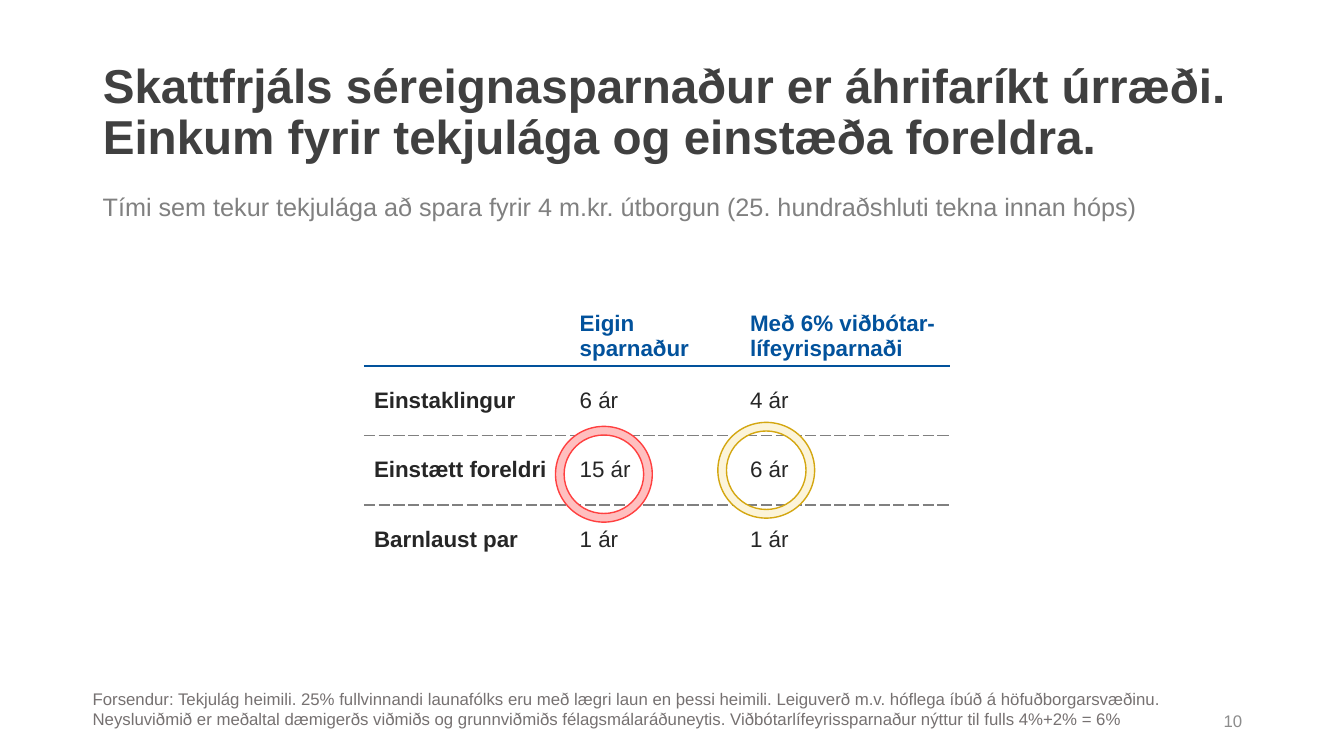
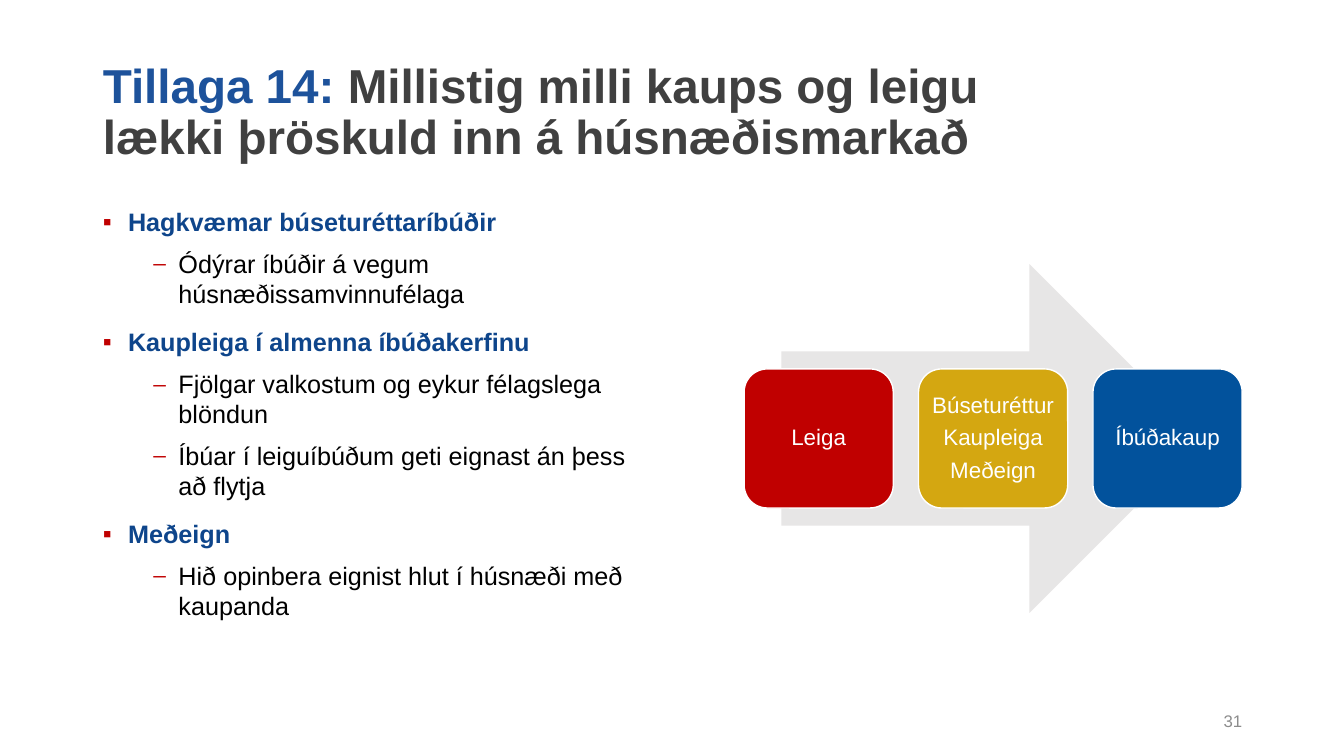
from lxml import etree
from pptx import Presentation
from pptx import util as u
from pptx.dml.color import RGBColor
from pptx.enum import shapes, text
from pptx.oxml import ns

COLORS = {
    "title": "404040", "navy": "02529C", "accent": "1D529B", "heading": "0E458B",
    "black": "000000", "ink": "262626", "gray": "808080", "note": "767171",
    "number": "8C8C8C", "red": "C00000", "gold": "D4A711", "white": "FFFFFF",
    "arrow": "E7E6E6", "ring_red": "FF4040", "pale_red": "FFBFBF", "pale_gold": "FCF4D9",
}
LEFT, MIDDLE = text.PP_ALIGN.LEFT, text.MSO_ANCHOR.MIDDLE
TITLE_PARA = {"alignment": LEFT, "line_spacing": 0.9, "space_before": u.Pt(0)}
BULLETS = [
    {"char": "▪", "indent": 0.25, "before": 10, "color": "heading", "bold": True},
    {"char": "⎯", "indent": 0.75, "before": 5, "color": "black", "bold": False},
]


def write(para, spans, size, bold=False, **para_format):
    for name, value in para_format.items():
        setattr(para, name, value)
    for words, color in spans:
        for i, line in enumerate(words.split("\n")):
            if i:
                para.add_line_break()
            span = para.add_run()
            span.text = line
            for name, value in {"name": "Arial", "size": u.Pt(size), "bold": bold}.items():
                setattr(span.font, name, value)
            span.font.color.rgb = RGBColor.from_string(COLORS[color])


def place(page, kind, left, top, width, height, fill=None, line=None):
    area = [u.Inches(n) for n in (left, top, width, height)]
    if kind is None:
        box = page.shapes.add_textbox(*area)
        box.text_frame.word_wrap = True
        return box
    box = page.shapes.add_shape(kind, *area)
    box.shadow.inherit = False
    box.fill.solid()
    box.fill.fore_color.rgb = RGBColor.from_string(COLORS[fill])
    if line:
        box.line.color.rgb = RGBColor.from_string(COLORS[line])
        box.line.width = u.Pt(1)
    else:
        box.line.fill.background()
    return box


deck = Presentation()
deck.slide_width, deck.slide_height = u.Inches(13.33), u.Inches(7.5)

pages = []
for layout, number, title_spans in (
    (5, "10", [("Skattfrjáls séreignasparnaður er áhrifaríkt úrræði. "
                "Einkum fyrir tekjulága og einstæða foreldra.", "title")]),
    (1, "31", [("Tillaga 14: ", "accent"),
               ("Millistig milli kaups og leigu \nlækki þröskuld inn á húsnæðismarkað", "title")]),
):
    page = deck.slides.add_slide(deck.slide_layouts[layout])
    title = page.shapes.title
    for name, value in {"left": 0.92, "top": 0.4, "width": 11.5, "height": 1.45}.items():
        setattr(title, name, u.Inches(value))
    title.text_frame.auto_size = text.MSO_AUTO_SIZE.NONE
    title.text_frame.vertical_anchor = MIDDLE
    write(title.text_frame.paragraphs[0], title_spans, 34, True, **TITLE_PARA)
    box = place(page, None, 9.42, 6.95, 3, 0.4)
    box.text_frame.vertical_anchor = MIDDLE
    write(box.text_frame.paragraphs[0], [(number, "number")], 12, alignment=text.PP_ALIGN.RIGHT)
    pages.append(page)

savings_page, proposal_page = pages

for area, words, color, size in (
    ((0.92, 1.85, 12.41, 0.4),
     "Tími sem tekur tekjulága að spara fyrir 4 m.kr. útborgun (25. hundraðshluti tekna innan hóps)",
     "gray", 18),
    ((0.82, 6.78, 11.68, 0.71),
     "Forsendur: Tekjulág heimili. 25% fullvinnandi launafólks eru með lægri laun en þessi heimili. "
     "Leiguverð m.v. hóflega íbúð á höfuðborgarsvæðinu. Neysluviðmið er meðaltal dæmigerðs viðmiðs og "
     "grunnviðmiðs félagsmálaráðuneytis. Viðbótarlífeyrissparnaður nýttur til fulls 4%+2% = 6%",
     "note", 12),
):
    box = place(savings_page, None, *area)
    write(box.text_frame.paragraphs[0], [(words, color)], size)

ROWS = [
    ("", "Eigin sparnaður", "Með 6% viðbótar- lífeyrisparnaði"),
    ("Einstaklingur", "6 ár", "4 ár"),
    ("Einstætt foreldri", "15 ár", "6 ár"),
    ("Barnlaust par", "1 ár", "1 ár"),
]
table_area = [u.Inches(n) for n in (3.61, 2.92, 5.81, 2.78)]
table = savings_page.shapes.add_table(len(ROWS), len(ROWS[0]), *table_area).table
table.first_row = table.horz_banding = False
table._tbl.tblPr.find(ns.qn("a:tableStyleId")).text = "{2D5ABB26-0587-4C30-8999-92F81FD0307C}"
for column, width in zip(table.columns, (2.04, 1.69, 2.08)):
    column.width = u.Inches(width)

rules = [None, ("navy", 2.25, "solid"), ("gray", 1, "sysDash"), ("gray", 1, "sysDash"), None]
for r, row in enumerate(ROWS):
    table.rows[r].height = u.Inches(0.69 if r else 0.71)
    for c, words in enumerate(row):
        cell = table.cell(r, c)
        cell.vertical_anchor = MIDDLE if r else text.MSO_ANCHOR.BOTTOM
        if words:
            write(cell.text_frame.paragraphs[0], [(words, "ink" if r else "navy")], 16,
                  r == 0 or c == 0)
        for tag, rule in (("a:lnT", rules[r]), ("a:lnB", rules[r + 1])):
            if rule:
                color, weight, dash = rule
                border = etree.SubElement(cell._tc.get_or_add_tcPr(), ns.qn(tag), w=str(u.Pt(weight)))
                paint = etree.SubElement(border, ns.qn("a:solidFill"))
                etree.SubElement(paint, ns.qn("a:srgbClr"), val=COLORS[color])
                etree.SubElement(border, ns.qn("a:prstDash"), val=dash)
        cell.fill.background()

for left, top, fill, line in ((5.51, 4.23, "pale_red", "ring_red"), (7.12, 4.19, "pale_gold", "gold")):
    ring = place(savings_page, shapes.MSO_SHAPE.DONUT, left, top, 0.96, 0.95, fill, line)
    ring.adjustments[0] = 0.09

body = proposal_page.placeholders[1]
for name, value in {"left": 0.92, "top": 2, "width": 5.7, "height": 4.34}.items():
    setattr(body, name, u.Inches(value))
frame = body.text_frame
frame.auto_size = text.MSO_AUTO_SIZE.NONE
for i, (level, words) in enumerate((
    (0, "Hagkvæmar búseturéttaríbúðir"),
    (1, "Ódýrar íbúðir á vegum húsnæðissamvinnufélaga"),
    (0, "Kaupleiga í almenna íbúðakerfinu"),
    (1, "Fjölgar valkostum og eykur félagslega blöndun"),
    (1, "Íbúar í leiguíbúðum geti eignast án þess að flytja"),
    (0, "Meðeign"),
    (1, "Hið opinbera eignist hlut í húsnæði með kaupanda"),
)):
    style = BULLETS[level]
    para = frame.add_paragraph() if i else frame.paragraphs[0]
    write(para, [(words, style["color"])], 18, style["bold"], level=level,
          space_before=u.Pt(style["before"]), space_after=u.Pt(3))
    props = para._p.get_or_add_pPr()
    props.set("marL", str(u.Inches(style["indent"])))
    props.set("indent", str(u.Inches(-0.25)))
    bullet_color = etree.SubElement(props, ns.qn("a:buClr"))
    etree.SubElement(bullet_color, ns.qn("a:srgbClr"), val=COLORS["red"])
    etree.SubElement(props, ns.qn("a:buChar"), char=style["char"])

place(proposal_page, shapes.MSO_SHAPE.RIGHT_ARROW, 7.75, 2.62, 4.19, 3.46, "arrow")
for i, (fill, lines) in enumerate((
    ("red", ["Leiga"]),
    ("gold", ["Búseturéttur", "Kaupleiga", "Meðeign"]),
    ("navy", ["Íbúðakaup"]),
)):
    step = place(proposal_page, shapes.MSO_SHAPE.ROUNDED_RECTANGLE,
                 7.38 + i * 1.73, 3.66, 1.48, 1.38, fill, "white")
    frame = step.text_frame
    frame.vertical_anchor = MIDDLE
    for side in ("left", "right", "top", "bottom"):
        setattr(frame, f"margin_{side}", u.Inches(0.02))
    for j, words in enumerate(lines):
        para = frame.add_paragraph() if j else frame.paragraphs[0]
        write(para, [(words, "white")], 16, alignment=text.PP_ALIGN.CENTER,
              line_spacing=0.9, space_after=u.Pt(6 if j < len(lines) - 1 else 0))

deck.save("out.pptx")
